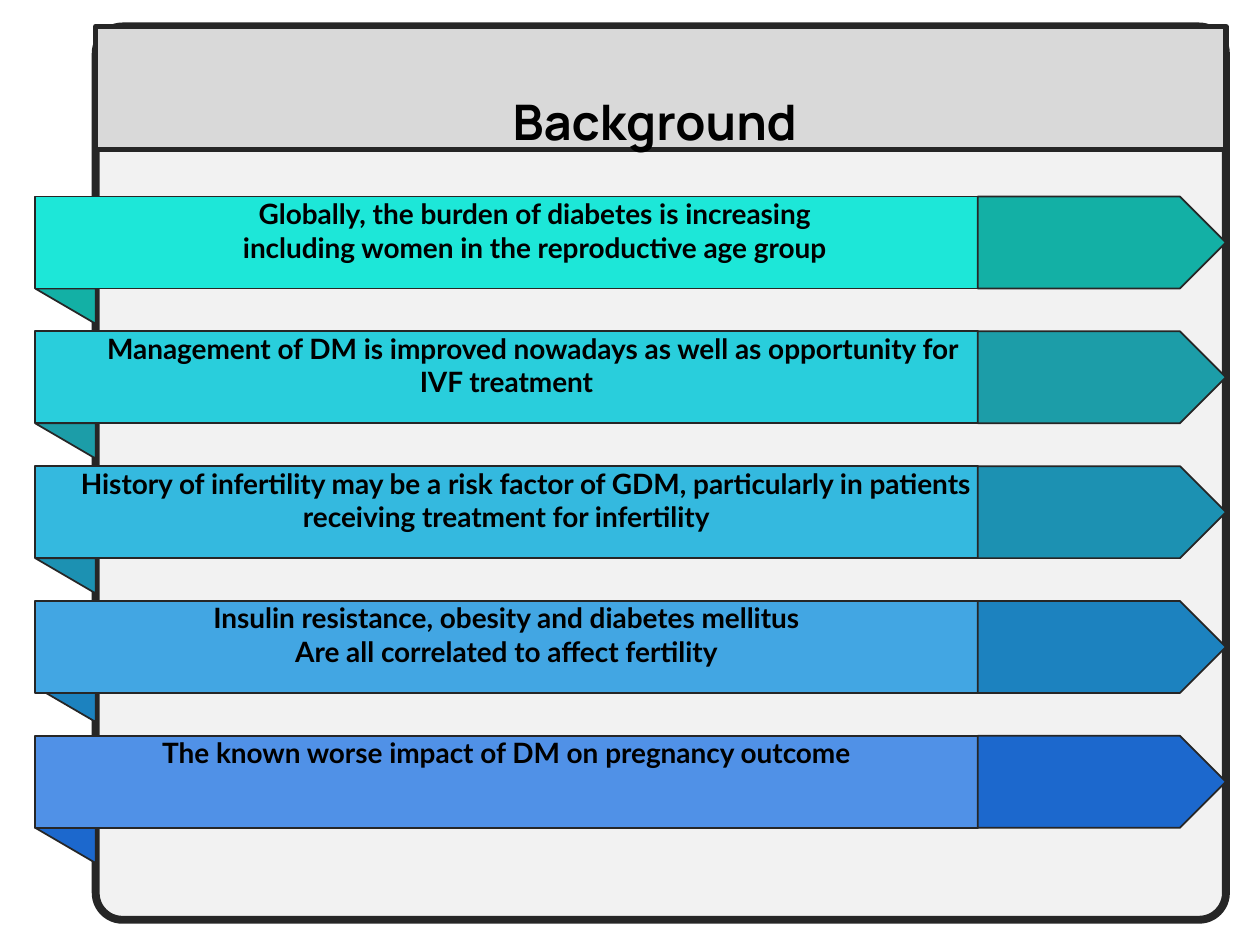
"""Build the Background slide: a framed panel with five folded ribbon arrows."""
from pptx import Presentation
from pptx.dml.color import RGBColor
from pptx.enum import shapes, text
from pptx.util import Inches, Pt

INK = RGBColor(0x26, 0x26, 0x26)
BLACK = RGBColor(0, 0, 0)
PANEL = RGBColor(0xF2, 0xF2, 0xF2)
HEADER = RGBColor(0xD9, 0xD9, 0xD9)
TITLE = "Background"
RIBBONS = [
    {"lines": ["Globally, the burden of diabetes is increasing",
               "including women in the reproductive age group"],
     "indent": 0.45, "fill": RGBColor(0x1D, 0xE7, 0xD8), "dark": RGBColor(0x13, 0xB0, 0xA5)},
    {"lines": ["Management of DM is improved nowadays as well as opportunity for IVF treatment"],
     "indent": 0.42, "fill": RGBColor(0x29, 0xCE, 0xDC), "dark": RGBColor(0x1C, 0x9D, 0xA8)},
    {"lines": ["History of infertility may be a risk factor of GDM, "
               "particularly in patients receiving treatment for infertility"],
     "indent": 0.31, "fill": RGBColor(0x34, 0xB9, 0xDF), "dark": RGBColor(0x1C, 0x91, 0xB2)},
    {"lines": ["Insulin resistance, obesity and diabetes mellitus",
               "Are all correlated to affect fertility"],
     "indent": 0, "fill": RGBColor(0x42, 0xA6, 0xE3), "dark": RGBColor(0x1C, 0x82, 0xBF),
     "fold_lift": 0.05},
    {"lines": ["The known worse impact of DM on pregnancy outcome"],
     "indent": 0, "fill": RGBColor(0x50, 0x91, 0xE7), "dark": RGBColor(0x1C, 0x68, 0xCD)},
]
LEFT, PANEL_LEFT, ARROW_LEFT, RIGHT = 0.28, 0.76, 7.76, 9.73
PANEL_TOP, PANEL_H, HEADER_H = 0.21, 7.09, 0.98
FIRST_TOP, PITCH, RIBBON_H, FOLD_H = 1.56, 1.07, 0.73, 0.28


def paint(sp, fill, width):
    sp.shadow.inherit = False
    sp.fill.solid()
    sp.fill.fore_color.rgb = fill
    sp.line.color.rgb = INK
    sp.line.width = Pt(width)
    return sp


def add_box(s, kind, left, top, right, height, fill, width=1):
    sp = s.shapes.add_shape(kind, Inches(left), Inches(top), Inches(right - left), Inches(height))
    return paint(sp, fill, width)


def add_fold(s, top, fill):
    builder = s.shapes.build_freeform(Inches(PANEL_LEFT), Inches(top + FOLD_H))
    corners = [(PANEL_LEFT, top), (LEFT, top)]
    builder.add_line_segments([(Inches(x), Inches(y)) for x, y in corners], close=True)
    paint(builder.convert_to_shape(), fill, 1)


def write(sp, lines, size, font, anchor, indent=0, right_inset=0):
    tf = sp.text_frame
    frame = {"margin_left": 0, "margin_top": 0, "margin_right": Inches(right_inset),
             "margin_bottom": 0, "word_wrap": True, "vertical_anchor": anchor}
    for name, value in frame.items():
        setattr(tf, name, value)
    for i, line in enumerate(lines):
        p = tf.add_paragraph() if i else tf.paragraphs[0]
        p.alignment = text.PP_ALIGN.CENTER
        pPr = p._p.get_or_add_pPr()
        pPr.set("marL", "0")
        pPr.set("indent", str(Inches(indent)))
        r = p.add_run()
        r.text = line
        for name, value in {"size": Pt(size), "name": font, "bold": True}.items():
            setattr(r.font, name, value)
        r.font.color.rgb = BLACK


def main():
    prs = Presentation()
    prs.slide_width, prs.slide_height = Inches(10), Inches(7.5)
    s = prs.slides.add_slide(prs.slide_layouts[6])
    kinds = shapes.MSO_SHAPE
    panel = add_box(s, kinds.ROUNDED_RECTANGLE, PANEL_LEFT, PANEL_TOP, RIGHT, PANEL_H, PANEL, 4.5)
    panel.adjustments[0] = 0.03
    for i, ribbon in enumerate(RIBBONS):
        top = FIRST_TOP + i * PITCH
        add_fold(s, top + RIBBON_H - ribbon.get("fold_lift", 0), ribbon["dark"])
        band = add_box(s, kinds.RECTANGLE, LEFT, top, ARROW_LEFT, RIBBON_H, ribbon["fill"])
        write(band, ribbon["lines"], 16, "Lato", text.MSO_ANCHOR.TOP, ribbon["indent"])
        add_box(s, kinds.PENTAGON, ARROW_LEFT, top, RIGHT, RIBBON_H, ribbon["dark"])
    header = add_box(s, kinds.RECTANGLE, PANEL_LEFT, PANEL_TOP, RIGHT, HEADER_H, HEADER, 3)
    write(header, [TITLE], 28, "Manrope", text.MSO_ANCHOR.BOTTOM, right_inset=0.1)
    prs.save("out.pptx")


if __name__ == "__main__":
    main()
